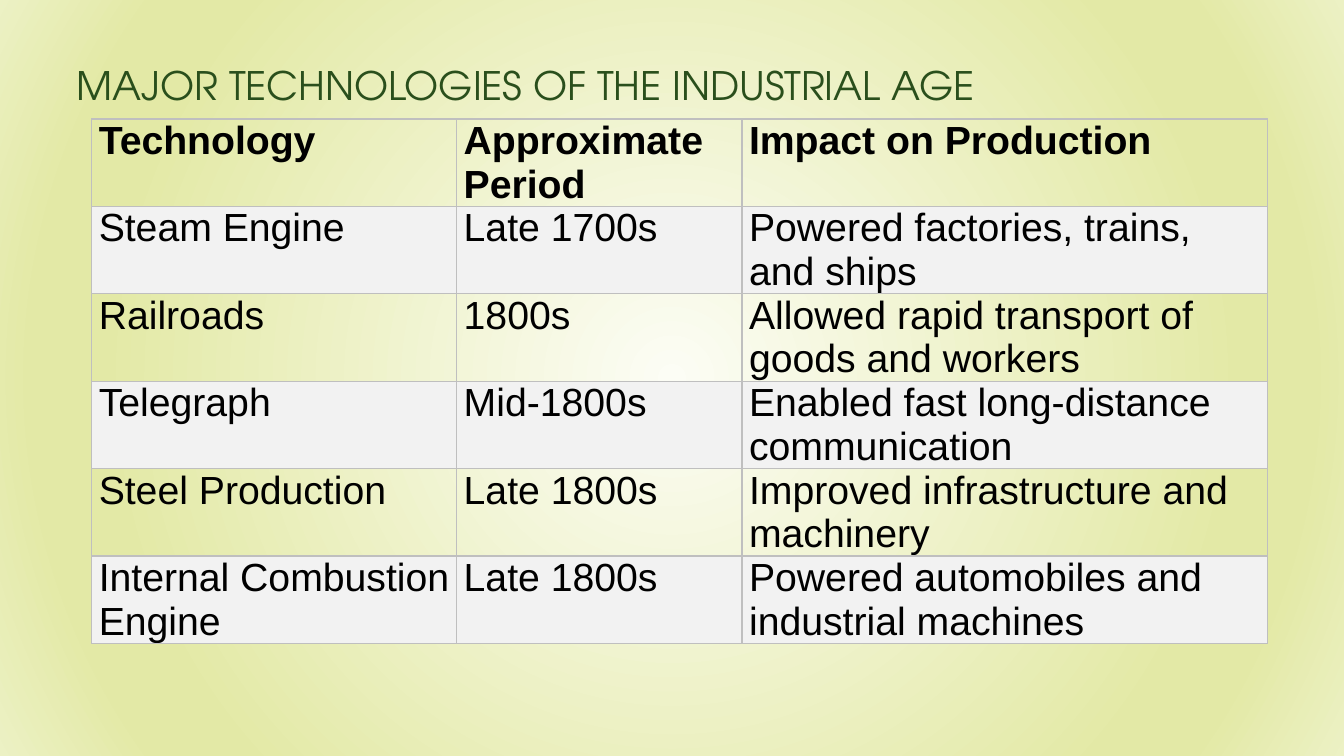
"""Builds a slide with a table of the major technologies of the Industrial Age."""
from pptx import Presentation
from pptx.dml.color import RGBColor
from pptx.enum.text import MSO_ANCHOR, MSO_AUTO_SIZE, PP_ALIGN
from pptx.oxml import parse_xml
from pptx.oxml.ns import nsdecls, qn
from pptx.util import Inches, Pt

BOTTOM = MSO_ANCHOR.BOTTOM
TOP = MSO_ANCHOR.TOP
NO_AUTOFIT = MSO_AUTO_SIZE.NONE
LEFT = PP_ALIGN.LEFT

BACKGROUND_STOPS = [(0, "FCFDF5"), (74, "E3E9A6"), (83, "E3E9A6"), (100, "ECF1C4")]
COLUMN_WIDTHS = [3.62, 2.83, 5.21]
ROW_HEIGHT = 0.86
ROWS = [
    ("Technology", "Approximate Period", "Impact on Production"),
    ("Steam Engine", "Late 1700s", "Powered factories, trains, and ships"),
    ("Railroads", "1800s", "Allowed rapid transport of goods and workers"),
    ("Telegraph", "Mid-1800s", "Enabled fast long-distance communication"),
    ("Steel Production", "Late 1800s", "Improved infrastructure and machinery"),
    ("Internal Combustion Engine", "Late 1800s", "Powered automobiles and industrial machines"),
]


def color(value):
    return RGBColor.from_string(value)


def write_text(text_frame, text, font="Arial", size=28, fill="000000", bold=False, spacing=1.0):
    paragraph = text_frame.paragraphs[0]
    paragraph.text = text
    paragraph.alignment = LEFT
    paragraph.line_spacing = spacing
    run_font = paragraph.runs[0].font
    run_font.name = font
    run_font.size = Pt(size)
    run_font.bold = bold
    run_font.color.rgb = color(fill)


presentation = Presentation()
presentation.slide_width = Inches(13.33)
presentation.slide_height = Inches(7.5)
slide = presentation.slides.add_slide(presentation.slide_layouts[5])

slide.background.fill.solid()
background = slide.element.find(".//" + qn("p:bgPr"))
stops = "".join(
    f'<a:gs pos="{position * 1000}"><a:srgbClr val="{value}"/></a:gs>'
    for position, value in BACKGROUND_STOPS
)
gradient = parse_xml(
    f'<a:gradFill {nsdecls("a")} rotWithShape="1"><a:gsLst>{stops}</a:gsLst><a:path path="circle">'
    '<a:fillToRect l="50000" t="50000" r="50000" b="50000"/></a:path></a:gradFill>'
)
background.replace(background.find(qn("a:solidFill")), gradient)

title = slide.shapes.title
title.left, title.top = Inches(0.66), Inches(0.25)
title.width, title.height = Inches(11.67), Inches(0.88)
title.text_frame.auto_size = NO_AUTOFIT
title.text_frame.vertical_anchor = BOTTOM
write_text(title.text_frame, "MAJOR TECHNOLOGIES OF THE INDUSTRIAL AGE",
           font="TeX Gyre Adventor", fill="2A4F1C", spacing=0.9)

table_shape = slide.shapes.add_table(
    len(ROWS), len(COLUMN_WIDTHS), Inches(0.91), Inches(1.18),
    Inches(sum(COLUMN_WIDTHS)), Inches(ROW_HEIGHT * len(ROWS)),
)
table = table_shape.table
for column, width in zip(table.columns, COLUMN_WIDTHS):
    column.width = Inches(width)

for row_index, row_texts in enumerate(ROWS):
    table.rows[row_index].height = Inches(ROW_HEIGHT)
    for column_index, text in enumerate(row_texts):
        cell = table.cell(row_index, column_index)
        cell.margin_left = cell.margin_right = Inches(0.07)
        cell.margin_top = cell.margin_bottom = 0
        cell.vertical_anchor = TOP
        write_text(cell.text_frame, text, bold=row_index == 0)
        if row_index % 2:
            cell.fill.solid()
            cell.fill.fore_color.rgb = color("F2F2F2")
        else:
            cell.fill.background()
        cell_properties = cell._tc.get_or_add_tcPr()
        for position, side in enumerate(("lnL", "lnR", "lnT", "lnB")):
            border = parse_xml(
                f'<a:{side} {nsdecls("a")} w="{Pt(1)}"><a:solidFill>'
                f'<a:srgbClr val="BFBFBF"/></a:solidFill></a:{side}>'
            )
            cell_properties.insert(position, border)

presentation.save("out.pptx")
